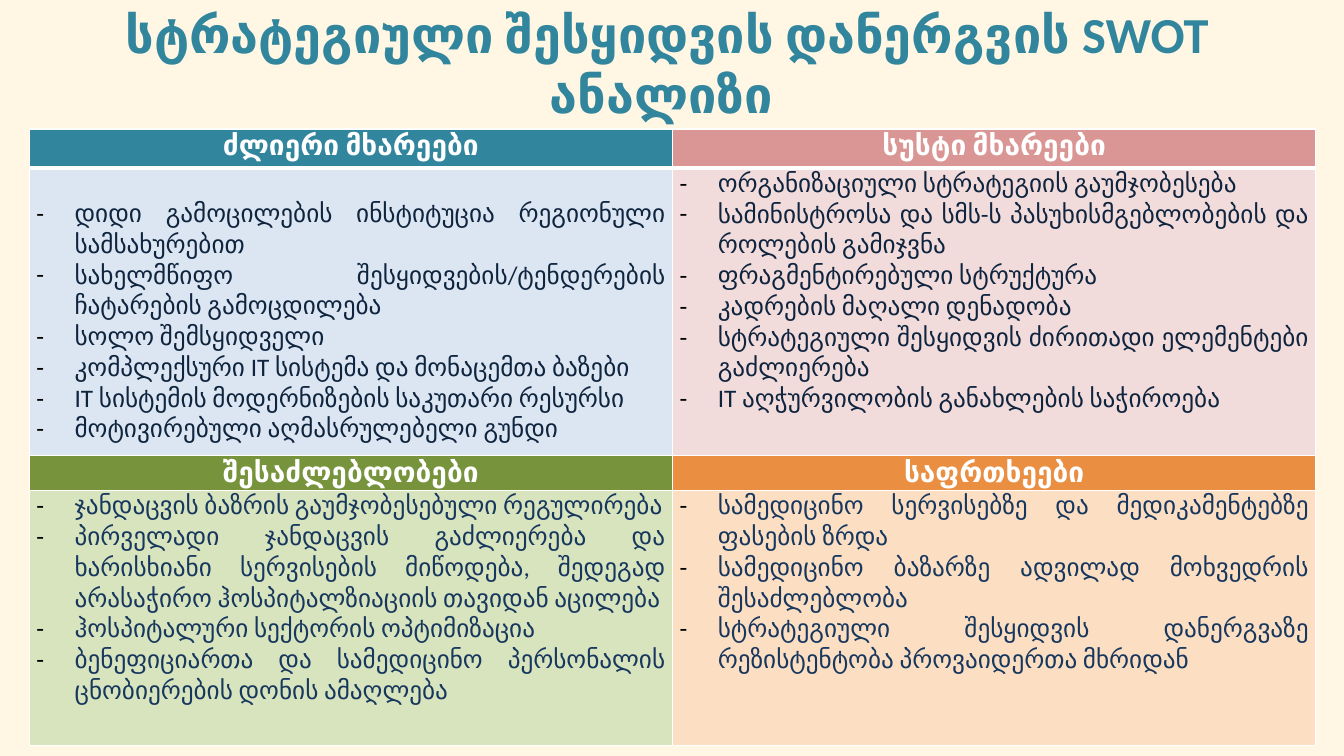
from lxml import etree
from pptx import Presentation
from pptx.dml.color import RGBColor
from pptx.enum.text import MSO_ANCHOR, PP_ALIGN
from pptx.oxml import parse_xml
from pptx.oxml.ns import nsdecls, qn
from pptx.util import Inches, Pt

THEME = dict(
    font="Calibri", title_size=36, heading_size=20, body_size=18,
    background="FFF6E4", title="31859C", white="FFFFFF", bullet="000000",
    upper_text="0F243E", lower_text="17375E",
)
HANGING = Inches(0.38)

# Each quadrant: heading, heading fill, body fill, opacity of both (%), top margin, points
QUADRANTS = [
    ("ძლიერი მხარეები", "31859C", "DCE6F2", (100, 100), 0.3, [
        "დიდი გამოცილების ინსტიტუცია რეგიონული სამსახურებით",
        "სახელმწიფო შესყიდვების/ტენდერების ჩატარების გამოცდილება",
        "სოლო შემსყიდველი",
        "კომპლექსური IT სისტემა და მონაცემთა ბაზები",
        "IT სისტემის მოდერნიზების საკუთარი რესურსი",
        "მოტივირებული აღმასრულებელი გუნდი",
    ]),
    ("სუსტი მხარეები", "D99694", "F2DCDB", (100, 100), 0, [
        "ორგანიზაციული სტრატეგიის გაუმჯობესება",
        "სამინისტროსა და სმს-ს პასუხისმგებლობების და როლების გამიჯვნა",
        "ფრაგმენტირებული სტრუქტურა",
        "კადრების მაღალი დენადობა",
        "სტრატეგიული შესყიდვის ძირითადი ელემენტები გაძლიერება",
        "IT აღჭურვილობის განახლების საჭიროება",
    ]),
    ("შესაძლებლობები", "77933C", "D7E4BD", (100, 100), 0, [
        "ჯანდაცვის ბაზრის გაუმჯობესებული რეგულირება",
        "პირველადი ჯანდაცვის გაძლიერება და ხარისხიანი სერვისების მიწოდება, "
        "შედეგად არასაჭირო ჰოსპიტალზიაციის თავიდან აცილება",
        "ჰოსპიტალური სექტორის ოპტიმიზაცია",
        "ბენეფიციართა და სამედიცინო პერსონალის ცნობიერების დონის ამაღლება",
    ]),
    ("საფრთხეები", "E46C0A", "FCD5B5", (74, 69), 0, [
        "სამედიცინო სერვისებზე და მედიკამენტებზე ფასების ზრდა",
        "სამედიცინო ბაზარზე ადვილად მოხვედრის შესაძლებლობა",
        "სტრატეგიული შესყიდვის დანერგვაზე რეზისტენტობა პროვაიდერთა მხრიდან",
    ]),
]


def write_text(frame, lines, size, color, bold=False, align=PP_ALIGN.CENTER, bullet=None):
    for index, line in enumerate(lines):
        paragraph = frame.add_paragraph() if index else frame.paragraphs[0]
        paragraph.alignment = align
        run = paragraph.add_run()
        run.text = line
        run.font.name = THEME["font"]
        run.font.size = Pt(size)
        run.font.bold = bold
        run.font.color.rgb = RGBColor.from_string(color)
        if bullet:
            properties = paragraph._p.get_or_add_pPr()
            properties.set("marL", str(HANGING))
            properties.set("indent", str(-HANGING))
            bullet_color = etree.SubElement(properties, qn("a:buClr"))
            etree.SubElement(bullet_color, qn("a:srgbClr"), val=THEME["bullet"])
            etree.SubElement(properties, qn("a:buFont"), typeface=THEME["font"])
            etree.SubElement(properties, qn("a:buChar"), char=bullet)


def format_cell(cell, fill, opacity, bottom_width, top_margin=0):
    cell.margin_left = cell.margin_right = Inches(0.07)
    cell.margin_top, cell.margin_bottom = Inches(top_margin), 0
    cell.fill.solid()
    cell.fill.fore_color.rgb = RGBColor.from_string(fill)
    properties = cell._tc.get_or_add_tcPr()
    if opacity < 100:
        fill_color = properties.find(".//" + qn("a:srgbClr"))
        etree.SubElement(fill_color, qn("a:alpha"), val=str(opacity * 1000))
    widths = {"lnL": 1, "lnR": 1, "lnT": 1, "lnB": bottom_width}
    for position, (side, width) in enumerate(widths.items()):
        properties.insert(position, parse_xml(
            f'<a:{side} {nsdecls("a")} w="{Pt(width)}"><a:solidFill>'
            f'<a:srgbClr val="{THEME["white"]}"/></a:solidFill></a:{side}>'))


# Slide and background
presentation = Presentation()
presentation.slide_width, presentation.slide_height = Inches(13.33), Inches(7.5)
slide = presentation.slides.add_slide(presentation.slide_layouts[6])
slide.background.fill.solid()
slide.background.fill.fore_color.rgb = RGBColor.from_string(THEME["background"])

# Title
title = slide.shapes.add_textbox(Inches(0.39), Inches(0.3), Inches(12.45), Inches(0.66))
title.text_frame.word_wrap = True
title.text_frame.vertical_anchor = MSO_ANCHOR.MIDDLE
write_text(title.text_frame, ["სტრატეგიული შესყიდვის დანერგვის SWOT ანალიზი "],
           THEME["title_size"], THEME["title"], bold=True)

# Table: a heading row and a body row for each pair of quadrants
row_heights = [0.39, 2.85, 0.35, 2.53]
table = slide.shapes.add_table(4, 2, Inches(0.29), Inches(1.28), Inches(12.76),
                               Inches(sum(row_heights))).table
table.horz_banding = False
for row, height in zip(table.rows, row_heights):
    row.height = Inches(height)

# Quadrants
for index, (heading, heading_fill, body_fill, opacities, top_margin, points) in enumerate(QUADRANTS):
    pair, column = divmod(index, 2)
    heading_cell = table.cell(2 * pair, column)
    body_cell = table.cell(2 * pair + 1, column)
    format_cell(heading_cell, heading_fill, opacities[0], bottom_width=1 if pair else 3)
    format_cell(body_cell, body_fill, opacities[1], bottom_width=1, top_margin=top_margin)
    write_text(heading_cell.text_frame, [heading], THEME["heading_size"], THEME["white"], bold=True)
    write_text(body_cell.text_frame, points, THEME["body_size"],
               THEME["lower_text" if pair else "upper_text"],
               align=PP_ALIGN.JUSTIFY, bullet="-")

presentation.save("out.pptx")
